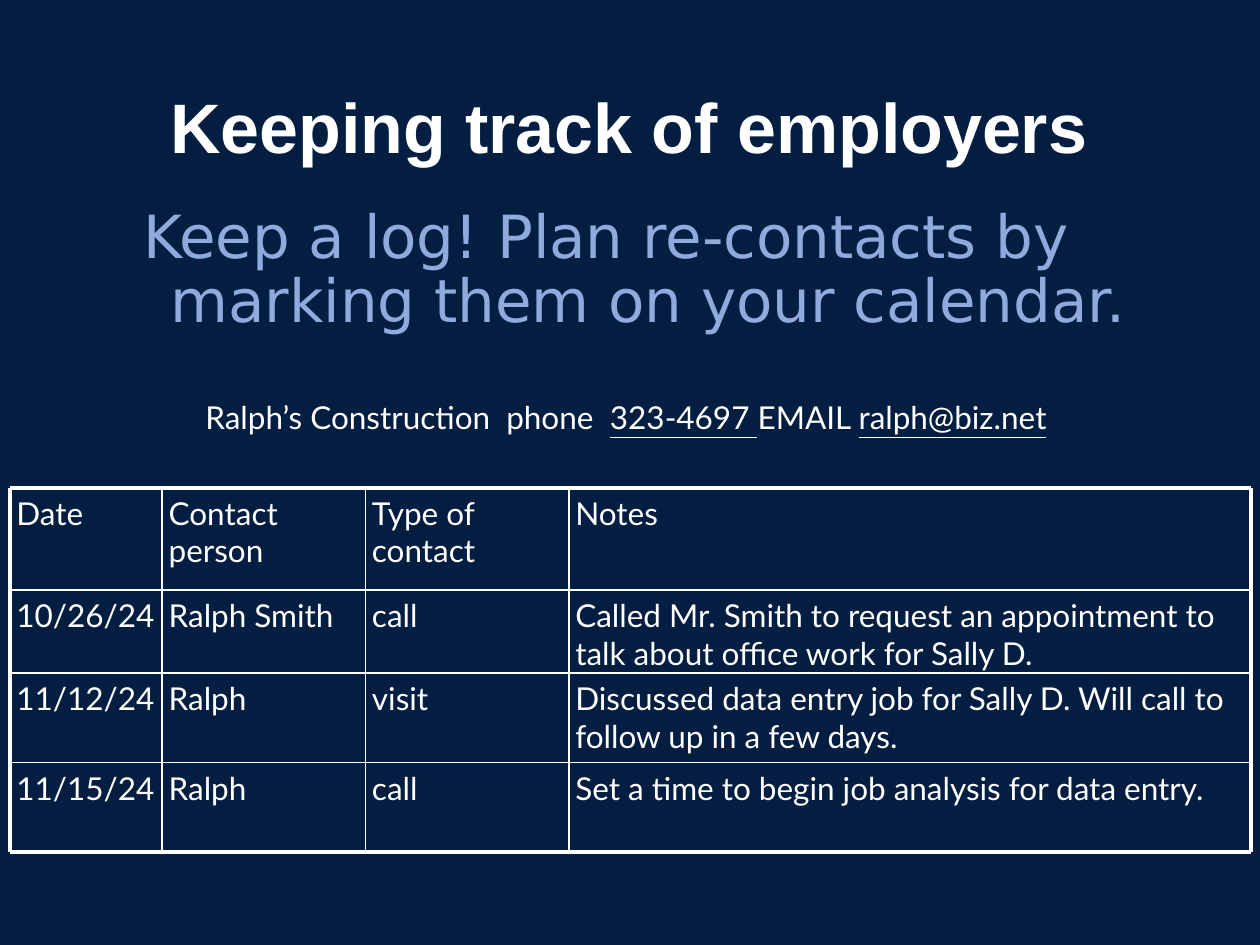
from itertools import accumulate

from lxml import etree
from pptx import Presentation
from pptx.dml.color import RGBColor
from pptx.enum.shapes import MSO_CONNECTOR
from pptx.enum.text import MSO_ANCHOR, PP_ALIGN
from pptx.oxml.ns import qn
from pptx.util import Cm, Pt

STRAIGHT = MSO_CONNECTOR.STRAIGHT
MIDDLE = MSO_ANCHOR.MIDDLE
TOP = MSO_ANCHOR.TOP
LEFT = PP_ALIGN.LEFT
CENTER = PP_ALIGN.CENTER

NAVY = RGBColor(0x04, 0x1E, 0x42)
WHITE = RGBColor(0xFF, 0xFF, 0xFF)
SKY = RGBColor(0x8F, 0xAA, 0xDC)

BLANK_LAYOUT = 6
PLAIN_TABLE_STYLE = "{2D5ABB26-0587-4C30-8999-92F81FD0307C}"
OUTER_LINE = Pt(2.25)
INNER_LINE = Pt(1)
LOG_LEFT, LOG_TOP = 0.2, 9.83
COLUMN_WIDTHS = (3.07, 4.1, 4.1, 13.74)
ROW_HEIGHTS = (2.06, 1.68, 1.8, 1.8)
LOG = (
    ("Date", "Contact person", "Type of contact", "Notes"),
    ("10/26/24", "Ralph Smith", "call",
     "Called Mr. Smith to request an appointment to talk about office work for Sally D."),
    ("11/12/24", "Ralph", "visit",
     "Discussed data entry job for Sally D. Will call to follow up in a few days."),
    ("11/15/24", "Ralph", "call", "Set a time to begin job analysis for data entry."),
)
CONTACT = (
    ("Ralph’s Construction  phone  ", False),
    ("323-4697 ", True),
    ("EMAIL ", False),
    ("ralph@biz.net", True),
)


def add_text(paragraph, text, font="Lato", size=18, color=WHITE, bold=False, underline=False):
    """Append one formatted run to a paragraph."""
    run = paragraph.add_run()
    run.text = text
    run.font.name = font
    run.font.size = Pt(size)
    run.font.color.rgb = color
    run.font.bold = bold
    run.font.underline = underline


def add_box(slide, left, top, width, height, anchor=TOP, align=LEFT, spacing=1.0, wrap=True):
    """Add a text box and return its first paragraph."""
    shape = slide.shapes.add_textbox(Cm(left), Cm(top), Cm(width), Cm(height))
    frame = shape.text_frame
    frame.word_wrap = wrap
    frame.vertical_anchor = anchor
    paragraph = frame.paragraphs[0]
    paragraph.alignment = align
    paragraph.line_spacing = spacing
    return paragraph


def set_hanging_indent(paragraph, indent):
    """Indent every line of a paragraph but the first."""
    properties = paragraph._p.get_or_add_pPr()
    properties.set("marL", str(indent))
    properties.set("indent", str(-indent))


def add_line(slide, start, end, width):
    """Add a straight white line without a shadow."""
    line = slide.shapes.add_connector(STRAIGHT, *map(Cm, start + end))
    line.line.color.rgb = WHITE
    line.line.width = width
    etree.SubElement(line._element.spPr, qn("a:effectLst"))


def add_log_table(slide):
    """Add the contact log as a table without borders."""
    graphic_frame = slide.shapes.add_table(
        len(ROW_HEIGHTS), len(COLUMN_WIDTHS), Cm(LOG_LEFT), Cm(LOG_TOP),
        Cm(sum(COLUMN_WIDTHS)), Cm(sum(ROW_HEIGHTS)),
    )
    table = graphic_frame.table
    table.first_row = False
    table.horz_banding = False
    graphic_frame._element.find(".//" + qn("a:tableStyleId")).text = PLAIN_TABLE_STYLE
    for column, width in zip(table.columns, COLUMN_WIDTHS):
        column.width = Cm(width)
    for row, height, entries in zip(table.rows, ROW_HEIGHTS, LOG):
        row.height = Cm(height)
        for cell, text in zip(row.cells, entries):
            cell.margin_left = cell.margin_top = Cm(0.13)
            cell.margin_right = Cm(0.05)
            cell.margin_bottom = Cm(0)
            cell.fill.background()
            add_text(cell.text_frame.paragraphs[0], text)


def add_log_rules(slide):
    """Rule the contact log with thick outer and thin inner lines."""
    columns = list(accumulate(COLUMN_WIDTHS, initial=LOG_LEFT))
    rows = list(accumulate(ROW_HEIGHTS, initial=LOG_TOP))
    for y in rows:
        width = OUTER_LINE if y in (rows[0], rows[-1]) else INNER_LINE
        add_line(slide, (columns[0], y), (columns[-1], y), width)
    for x in columns:
        width = OUTER_LINE if x in (columns[0], columns[-1]) else INNER_LINE
        add_line(slide, (x, rows[0]), (x, rows[-1]), width)


def main():
    """Build the slide and save it."""
    presentation = Presentation()
    presentation.slide_width = Cm(25.4)
    presentation.slide_height = Cm(19.05)
    slide = presentation.slides.add_slide(presentation.slide_layouts[BLANK_LAYOUT])
    slide.background.fill.solid()
    slide.background.fill.fore_color.rgb = NAVY

    title = add_box(slide, 3.18, 0.79, 21.9, 3.68, anchor=MIDDLE, spacing=0.9)
    add_text(title, "Keeping track of employers", font="Arial", size=40, bold=True)

    advice = add_box(slide, 1.27, 4.05, 21.9, 4.34, align=CENTER, spacing=0.9)
    set_hanging_indent(advice, Cm(1.7))
    add_text(advice, "Keep a log! Plan re-contacts by marking them on your calendar.",
             font="DejaVu Sans", size=34, color=SKY)

    add_log_table(slide)
    add_log_rules(slide)

    contact = add_box(slide, 3.89, 7.9, 17.63, 1.8, wrap=False)
    for text, underline in CONTACT:
        add_text(contact, text, underline=underline)

    presentation.save("out.pptx")


if __name__ == "__main__":
    main()
